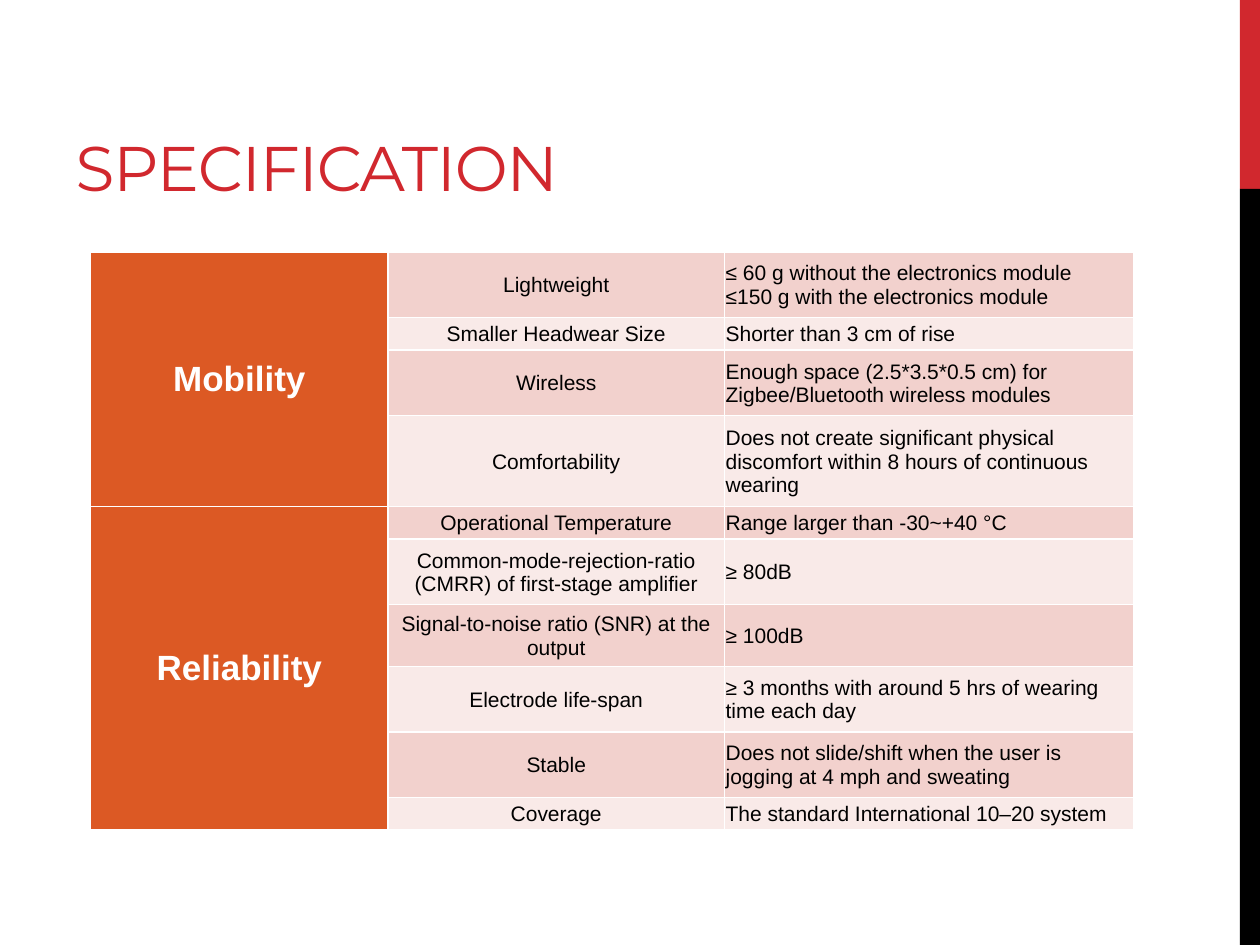
from lxml import etree
from pptx import Presentation, util as u
from pptx.dml.color import RGBColor
from pptx.enum import shapes, text
from pptx.oxml import ns

WIDTH, HEIGHT = u.Inches(10), u.Inches(7.5)
RED, BLACK, WHITE, ORANGE = "D1282E", "000000", "FFFFFF", "DC5924"
BANDS = ("F2D1CD", "F9EAE8")
COLUMNS = (2.36, 2.67, 3.25)
CENTER, LEFT = text.PP_ALIGN.CENTER, text.PP_ALIGN.LEFT
GROUPS = {
    "Mobility": [
        ("Lightweight", "≤ 60 g without the electronics module\n"
                        "≤150 g with the electronics module", 0.52),
        ("Smaller Headwear Size", "Shorter than 3 cm of rise", 0.26),
        ("Wireless", "Enough space (2.5*3.5*0.5 cm) for "
                     "Zigbee/Bluetooth wireless modules", 0.52),
        ("Comfortability", "Does not create significant physical discomfort "
                           "within 8 hours of continuous wearing", 0.72),
    ],
    "Reliability": [
        ("Operational Temperature", "Range larger than -30~+40 °C", 0.26),
        ("Common-mode-rejection-ratio (CMRR) of first-stage amplifier",
         "≥ 80dB", 0.52),
        ("Signal-to-noise ratio (SNR) at the output", "≥ 100dB", 0.49),
        ("Electrode life-span",
         "≥ 3 months with around 5 hrs of wearing time each day", 0.52),
        ("Stable", "Does not slide/shift when the user is "
                   "jogging at 4 mph and sweating", 0.52),
        ("Coverage", "The standard International 10–20 system", 0.26),
    ],
}


def paint(fill, color):
    """Make a fill solid in a hex colour."""
    fill.solid()
    fill.fore_color.rgb = RGBColor.from_string(color)


def write(frame, content, size=12, color=BLACK, font="Arial", bold=False,
          align=LEFT, spacing=None):
    """Write one paragraph per line of content in a single format."""
    frame.word_wrap = True
    for index, line in enumerate(content.split("\n")):
        paragraph = frame.add_paragraph() if index else frame.paragraphs[0]
        paragraph.alignment = align
        run = paragraph.add_run()
        run.text = line
        run.font.size, run.font.name, run.font.bold = u.Pt(size), font, bold
        run.font.color.rgb = RGBColor.from_string(color)
        if spacing is not None:
            run._r.get_or_add_rPr().set("spc", str(round(spacing * 100)))


def add_bar(slide, top, height, color):
    """Add a part of the right-hand stripe, placed by shares of the height."""
    left = round(WIDTH * 0.984)
    bar = slide.shapes.add_shape(
        shapes.MSO_SHAPE.RECTANGLE, left, round(HEIGHT * top),
        WIDTH - left, round(HEIGHT * height))
    bar.shadow.inherit = False
    paint(bar.fill, color)
    bar.line.fill.background()


def add_title(slide, content):
    """Place and fill the title placeholder."""
    title = slide.shapes.title
    title.left, title.top = round(WIDTH * 0.05), u.Inches(0.17)
    title.width, title.height = u.Inches(6.33), u.Inches(1.5)
    title.text_frame.vertical_anchor = text.MSO_ANCHOR.BOTTOM
    write(title.text_frame, content, size=36, color=RED, font="Montserrat",
          spacing=-0.6)


def add_borders(cell):
    """Draw thin white lines on all sides of a cell."""
    properties = cell._tc.get_or_add_tcPr()
    for side in ("a:lnL", "a:lnR", "a:lnT", "a:lnB"):
        line = etree.SubElement(properties, ns.qn(side), w=str(u.Pt(1)))
        fill = etree.SubElement(line, ns.qn("a:solidFill"))
        etree.SubElement(fill, ns.qn("a:srgbClr"), val=WHITE)


def format_cell(cell, color):
    """Set the borders, fill, margins and anchor of a cell."""
    add_borders(cell)
    paint(cell.fill, color)
    cell.margin_left = cell.margin_right = cell.margin_top = u.Inches(0.01)
    cell.margin_bottom = 0
    cell.vertical_anchor = text.MSO_ANCHOR.MIDDLE


def add_specification_table(slide):
    """Add the table, with one merged heading cell for each group."""
    rows = [row for group in GROUPS.values() for row in group]
    table = slide.shapes.add_table(
        len(rows), len(COLUMNS), u.Inches(0.72), u.Inches(2),
        u.Inches(sum(COLUMNS)), u.Inches(sum(row[2] for row in rows))).table
    for column, width in zip(table.columns, COLUMNS):
        column.width = u.Inches(width)
    for index, (name, value, height) in enumerate(rows):
        table.rows[index].height = u.Inches(height)
        band = BANDS[index % 2]
        for column, color in enumerate((ORANGE, band, band)):
            format_cell(table.cell(index, column), color)
        write(table.cell(index, 1).text_frame, name, align=CENTER)
        write(table.cell(index, 2).text_frame, value)
    first = 0
    for heading, group in GROUPS.items():
        cell = table.cell(first, 0)
        first += len(group)
        cell.merge(table.cell(first - 1, 0))
        write(cell.text_frame, heading, size=20, color=WHITE, bold=True,
              align=CENTER)


def main():
    """Build the slide and save it."""
    presentation = Presentation()
    presentation.slide_width, presentation.slide_height = WIDTH, HEIGHT
    slide = presentation.slides.add_slide(presentation.slide_layouts[5])
    add_bar(slide, 0, 0.2, RED)
    add_bar(slide, 0.2, 0.8, BLACK)
    add_title(slide, "SPECIFICATION")
    add_specification_table(slide)
    presentation.save("out.pptx")


if __name__ == "__main__":
    main()
